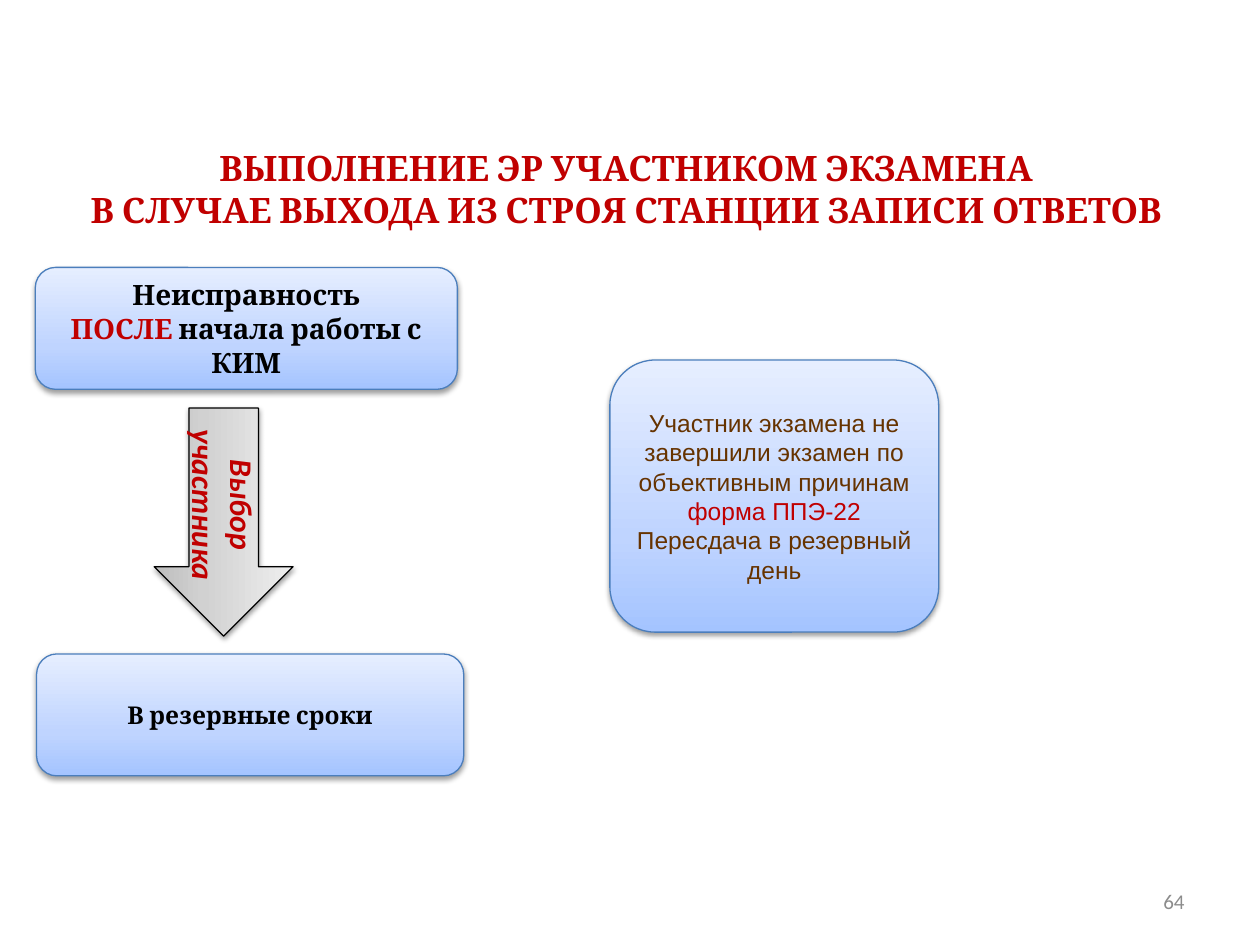
import pptx
import pptx.util
import pptx.dml.color
import pptx.enum.shapes
import pptx.enum.text
import pptx.oxml
import pptx.oxml.ns

SHAPE = pptx.enum.shapes.MSO_SHAPE
ALIGN = pptx.enum.text.PP_ALIGN
W, H = 10, 7.5

# Theme: colours, fonts, type sizes
THEME = dict(
    red="C00000", black="000000", brown="663300", grey="8C8C8C",
    blue_fill=((0, "A4C4FF"), (35, "BFD4FF"), (100, "E6EEFF")), blue_line="4B7EBC",
    grey_fill=((0, "BDBDBD"), (35, "D1D1D1"), (100, "EEEEEE")),
    serif="Cambria", sans="Calibri", plain="Arial",
    title=20, head=16, body=14, arrow=18, number=12,
)
T = THEME

# Content: a paragraph is a list of (text, colour) runs
TITLE = [[("ВЫПОЛНЕНИЕ ЭР УЧАСТНИКОМ ЭКЗАМЕНА\v"
           "В СЛУЧАЕ ВЫХОДА ИЗ СТРОЯ СТАНЦИИ ЗАПИСИ ОТВЕТОВ", "red")]]
FAULT = [[("Неисправность", "black")],
         [("ПОСЛЕ", "red"), (" начала работы с КИМ", "black")]]
RESERVE = [[("В резервные сроки", "black")]]
CHOICE = [[("Выбор участника", "red")]]
RETAKE = [[("Участник экзамена не завершили экзамен по объективным причинам", "brown")],
          [("форма ППЭ-22", "red")],
          [("Пересдача в резервный день", "brown")]]
NUMBER = [[("64", "grey")]]

# Places: left, top, width, height as shares of the slide
TITLE_AT = (0.047, 0.116, 0.9, 0.167)
NUMBER_AT = (0.717, 0.927, 0.233, 0.053)
BOXES = [
    ((0.028, 0.283, 0.335, 0.129), FAULT, dict(font="serif", size="head", bold=True)),
    ((0.029, 0.692, 0.339, 0.129), RESERVE, dict(font="serif", size="body", bold=True)),
    ((0.484, 0.381, 0.261, 0.288), RETAKE, dict(font="plain", size="body")),
]
ARROW_AT = (0.087, 0.479, 0.181, 0.147)


def place(at):
    x, y, w, h = at
    return [pptx.util.Inches(v) for v in (x * W, y * H, w * W, h * H)]


def rgb(value):
    return pptx.dml.color.RGBColor.from_string(value)


def write(tf, paragraphs, font, size, bold=False, italic=False, align=ALIGN.CENTER):
    tf.word_wrap = True
    tf.vertical_anchor = pptx.enum.text.MSO_ANCHOR.MIDDLE
    for i, runs in enumerate(paragraphs):
        p = tf.add_paragraph() if i else tf.paragraphs[0]
        p.alignment = align
        for j, (text, colour) in enumerate(runs):
            if "\v" in text:
                p.text = text
                new_runs = p.runs
            else:
                r = p.add_run()
                r.text = text
                new_runs = [r]
            for r in new_runs:
                f = r.font
                f.name, f.size = T[font], pptx.util.Pt(T[size])
                f.bold, f.italic = bold, italic
                f.color.rgb = rgb(T[colour])


def add_block(s, kind, at, stops, line):
    """A shape with a vertical gradient, a thin outline and a soft shadow."""
    sp = s.shapes.add_shape(kind, *place(at))
    sp.fill.gradient()
    sp.fill.gradient_angle = 90
    sp.line.color.rgb = rgb(line)
    sp.line.width = pptx.util.Pt(0.75)
    ns = pptx.oxml.ns.nsdecls("a")
    spPr = sp._element.spPr
    gs_list = spPr.find(".//" + pptx.oxml.ns.qn("a:gsLst"))
    for gs in list(gs_list):
        gs_list.remove(gs)
    for pos, colour in stops:
        gs_list.append(pptx.oxml.parse_xml(
            f'<a:gs {ns} pos="{pos * 1000}"><a:srgbClr val="{colour}"/></a:gs>'))
    spPr.append(pptx.oxml.parse_xml(
        f'<a:effectLst {ns}><a:outerShdw blurRad="{pptx.util.Pt(3.1)}" '
        f'dist="{pptx.util.Pt(1.6)}" dir="5400000" rotWithShape="0">'
        f'<a:srgbClr val="{T["black"]}"><a:alpha val="38000"/></a:srgbClr>'
        '</a:outerShdw></a:effectLst>'))
    return sp


def main():
    prs = pptx.Presentation()
    prs.slide_width, prs.slide_height = pptx.util.Inches(W), pptx.util.Inches(H)
    s = prs.slides.add_slide(prs.slide_layouts[5])

    # Title
    title = s.shapes.title
    title.left, title.top, title.width, title.height = place(TITLE_AT)
    write(title.text_frame, TITLE, font="serif", size="title", bold=True)

    # Slide number
    number = s.shapes.add_textbox(*place(NUMBER_AT))
    write(number.text_frame, NUMBER, font="sans", size="number", align=ALIGN.RIGHT)

    # Boxes
    for at, paragraphs, style in BOXES:
        box = add_block(s, SHAPE.ROUNDED_RECTANGLE, at, T["blue_fill"], T["blue_line"])
        write(box.text_frame, paragraphs, **style)

    # Arrow between the two left boxes, turned to point down
    arrow = add_block(s, SHAPE.RIGHT_ARROW, ARROW_AT, T["grey_fill"], T["black"])
    arrow.rotation = 90
    write(arrow.text_frame, CHOICE, font="sans", size="arrow", bold=True, italic=True)

    prs.save("out.pptx")


if __name__ == "__main__":
    main()
